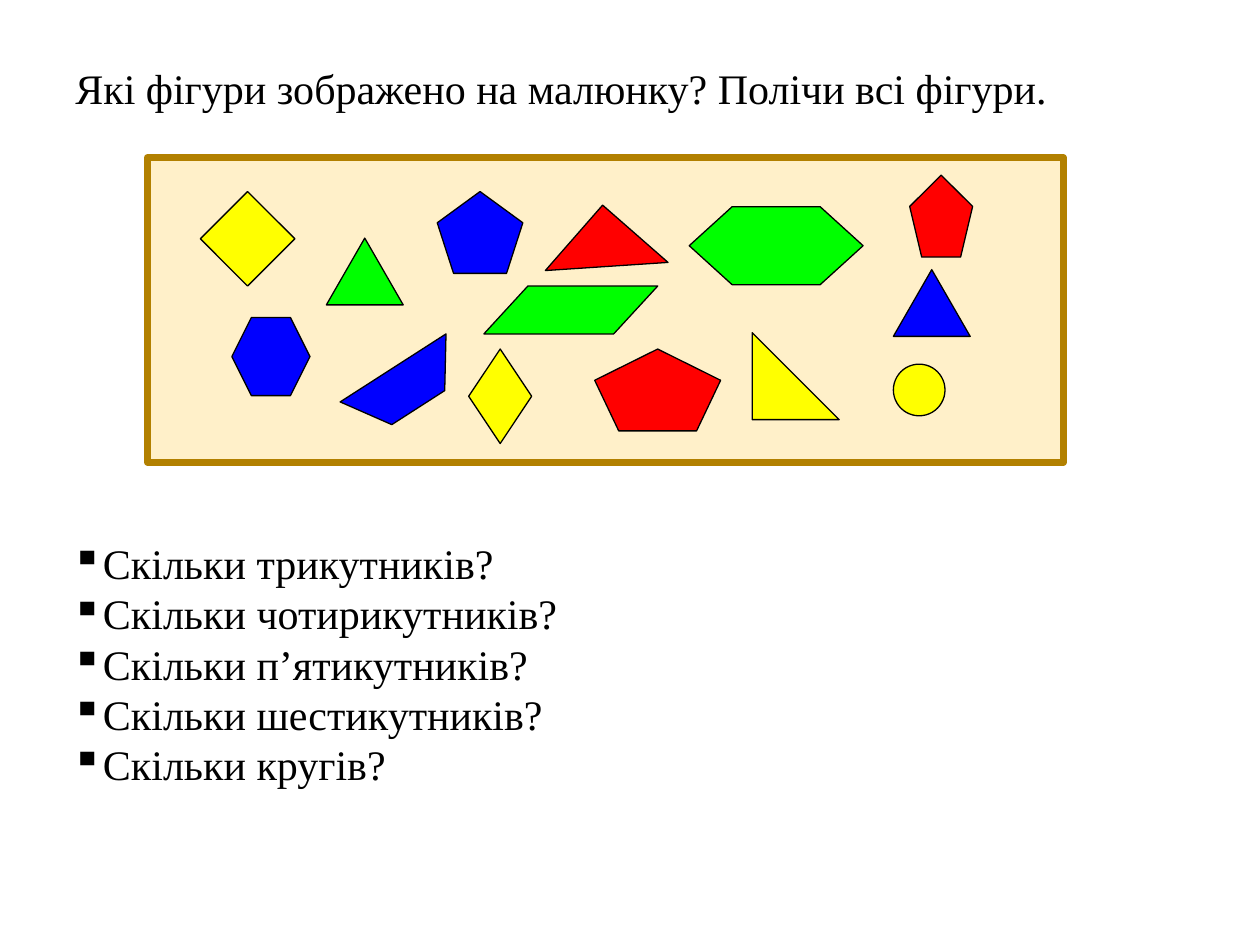
import pptx
import pptx.util
import pptx.dml.color
import pptx.enum.shapes
import pptx.enum.text
from lxml import etree

Inches = pptx.util.Inches
Pt = pptx.util.Pt
RGB = pptx.dml.color.RGBColor
KIND = pptx.enum.shapes.MSO_SHAPE
ALIGN = pptx.enum.text.PP_ALIGN
ANCHOR = pptx.enum.text.MSO_ANCHOR

BLACK = RGB(0, 0, 0)
RED = RGB(0xFF, 0, 0)
GREEN = RGB(0, 0xFF, 0)
BLUE = RGB(0, 0, 0xFF)
YELLOW = RGB(0xFF, 0xFF, 0)
CREAM = RGB(0xFF, 0xF0, 0xC9)
BROWN = RGB(0xB2, 0x80, 0)

FONT = {"name": "Times New Roman", "size": Pt(24)}
TITLE = "Які фігури зображено на малюнку? Полічи всі фігури."
ASKS = [
    "Скільки трикутників?",
    "Скільки чотирикутників?",
    "Скільки п’ятикутників?",
    "Скільки шестикутників?",
    "Скільки кругів?",
]

# kind, colour, (left, top, width, height), first adjustment, rotation
FIGURES = [
    (KIND.ISOSCELES_TRIANGLE, GREEN, (2.59, 1.89, 0.61, 0.53), None, 0),
    (KIND.REGULAR_PENTAGON, BLUE, (3.47, 1.52, 0.68, 0.65), None, 0),
    (KIND.PARALLELOGRAM, GREEN, (3.84, 2.27, 1.38, 0.38), 0.92, 0),
    (KIND.DIAMOND, YELLOW, (1.59, 1.52, 0.75, 0.75), None, 0),
    (KIND.HEXAGON, BLUE, (1.84, 2.52, 0.62, 0.62), 0.25, 0),
    (KIND.ISOSCELES_TRIANGLE, BLUE, (7.09, 2.14, 0.61, 0.53), None, 0),
    (KIND.REGULAR_PENTAGON, RED, (4.72, 2.77, 1, 0.65), None, 0),
    (KIND.HEXAGON, GREEN, (5.47, 1.64, 1.38, 0.62), 0.55, 0),
    (KIND.RIGHT_TRIANGLE, YELLOW, (5.97, 2.64, 0.69, 0.69), None, 0),
    (KIND.RIGHT_TRIANGLE, RED, (4.47, 1.77, 0.69, 0.69), None, 131.2),
    (KIND.DIAMOND, YELLOW, (3.72, 2.77, 0.5, 0.75), None, 0),
    (KIND.OVAL, YELLOW, (7.09, 2.89, 0.41, 0.41), None, 0),
    (KIND.REGULAR_PENTAGON, RED, (7.22, 1.39, 0.5, 0.65), None, 0),
]
QUAD = [(2.7, 3.19), (3.11, 3.37), (3.53, 3.1), (3.54, 2.65)]


def paint(shape, fill, line=BLACK, width=0.75):
    shape.shadow.inherit = False
    shape.fill.solid()
    shape.fill.fore_color.rgb = fill
    shape.line.color.rgb = line
    shape.line.width = Pt(width)


def figure(slide, kind, box, turn=0, adjust=None):
    shape = slide.shapes.add_shape(kind, *map(Inches, box))
    shape.rotation = turn
    if adjust is not None:
        shape.adjustments[0] = adjust
    return shape


def outline(slide, points):
    """Add a closed shape through points given in inches."""
    spots = [(Inches(x), Inches(y)) for x, y in points]
    form = slide.shapes.build_freeform(*spots[0])
    form.add_line_segments(spots[1:], close=True)
    return form.convert_to_shape()


def bullet(para):
    props = para._p.get_or_add_pPr()
    mark = etree.SubElement(props, pptx.oxml.ns.qn("a:buChar"))
    mark.set("char", "▪")


def text(slide, box, lines, anchor, marked=False):
    frame = slide.shapes.add_textbox(*map(Inches, box)).text_frame
    frame.word_wrap = True
    frame.vertical_anchor = anchor
    for i, line in enumerate(lines):
        para = frame.add_paragraph() if i else frame.paragraphs[0]
        run = para.add_run()
        run.text = line
        for key, value in FONT.items():
            setattr(run.font, key, value)
        run.font.color.rgb = BLACK
        if marked:
            para.alignment = ALIGN.JUSTIFY
            para.line_spacing = Pt(28.7)
            bullet(para)


def main():
    deck = pptx.Presentation()
    deck.slide_width, deck.slide_height = Inches(10), Inches(7.5)
    slide = deck.slides.add_slide(deck.slide_layouts[6])

    board = figure(slide, KIND.RECTANGLE, (1.17, 1.25, 7.27, 2.42))
    paint(board, CREAM, BROWN, 3.78)
    text(slide, (0.5, 0.3, 9.27, 0.79), [TITLE], ANCHOR.MIDDLE)
    for kind, fill, box, adjust, turn in FIGURES:
        paint(figure(slide, kind, box, turn, adjust), fill)
    paint(outline(slide, QUAD), BLUE)
    text(slide, (0.47, 4.22, 5.78, 2.12), ASKS, ANCHOR.TOP, marked=True)

    deck.save("out.pptx")


if __name__ == "__main__":
    main()
